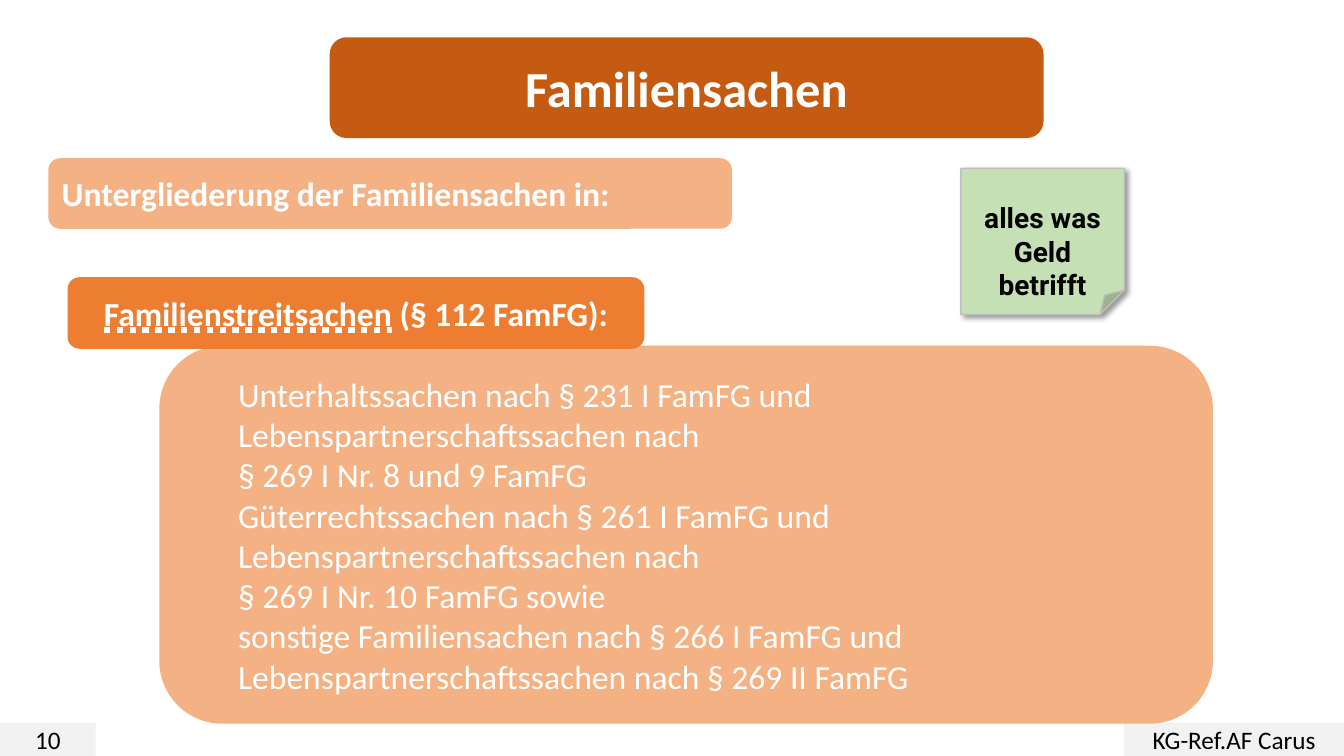
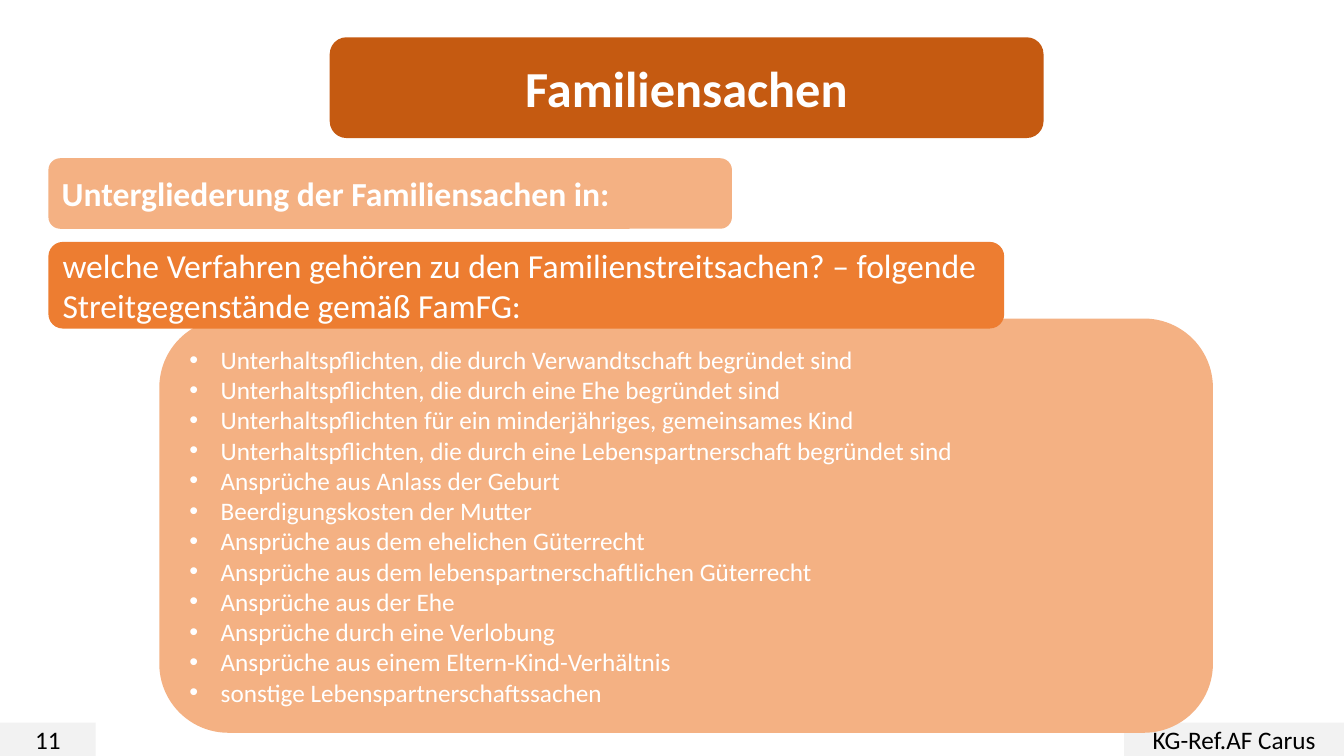
from dataclasses import dataclass

from lxml import etree
from pptx import Presentation
from pptx.dml.color import RGBColor
from pptx.enum.shapes import MSO_SHAPE
from pptx.enum.text import MSO_ANCHOR, MSO_UNDERLINE, PP_ALIGN
from pptx.oxml.ns import qn
from pptx.util import Inches, Pt

ROUNDED = MSO_SHAPE.ROUNDED_RECTANGLE
RECTANGLE = MSO_SHAPE.RECTANGLE
FOLDED = MSO_SHAPE.FOLDED_CORNER
TOP, MIDDLE = MSO_ANCHOR.TOP, MSO_ANCHOR.MIDDLE
LEFT, CENTER = PP_ALIGN.LEFT, PP_ALIGN.CENTER
DOTTED = MSO_UNDERLINE.DOTTED_HEAVY_LINE


@dataclass(frozen=True)
class Theme:
    """Colours, fonts and type sizes shared by all slides."""

    title_fill: str = "C55A11"
    accent: str = "ED7D31"
    panel: str = "F4B183"
    footer: str = "F2F2F2"
    note: str = "C5E0B4"
    note_edge: str = "BFBFBF"
    light: str = "FFFFFF"
    dark: str = "000000"
    font: str = "Calibri"
    note_font: str = "Roboto"
    title_size: int = 36
    heading_size: int = 24
    note_size: int = 20
    small_size: int = 18


THEME = Theme()
FIRST_PAGE = 10
PANEL_LEFT, PANEL_WIDTH = 1.58, 10.45

DISPUTES = [
    "Unterhaltssachen nach § 231 I FamFG und Lebenspartnerschaftssachen nach\n"
    "§ 269 I Nr. 8 und 9 FamFG",
    "Güterrechtssachen nach § 261 I FamFG und Lebenspartnerschaftssachen nach\n"
    "§ 269 I Nr. 10 FamFG sowie",
    "sonstige Familiensachen nach § 266 I FamFG und "
    "Lebenspartnerschaftssachen nach § 269 II FamFG",
]
CLAIMS = [
    "Unterhaltspflichten, die durch Verwandtschaft begründet sind",
    "Unterhaltspflichten, die durch eine Ehe begründet sind",
    "Unterhaltspflichten für ein minderjähriges, gemeinsames Kind",
    "Unterhaltspflichten, die durch eine Lebenspartnerschaft begründet sind",
    "Ansprüche aus Anlass der Geburt",
    "Beerdigungskosten der Mutter",
    "Ansprüche aus dem ehelichen Güterrecht",
    "Ansprüche aus dem lebenspartnerschaftlichen Güterrecht",
    "Ansprüche aus der Ehe",
    "Ansprüche durch eine Verlobung",
    "Ansprüche aus einem Eltern-Kind-Verhältnis",
    "sonstige Lebenspartnerschaftssachen",
]


def rgb(value):
    """Return the colour object for a hex value."""
    return RGBColor.from_string(value)


def add_box(slide, box, fill, lines, size, color=THEME.light, bold=False,
            align=LEFT, preset=ROUNDED, font=THEME.font):
    """Add a filled shape without outline that holds the given paragraphs."""
    shape = slide.shapes.add_shape(preset, *map(Inches, box))
    shape.shadow.inherit = False
    shape.fill.solid()
    shape.fill.fore_color.rgb = rgb(fill)
    shape.line.fill.background()
    frame = shape.text_frame
    frame.word_wrap = True
    frame.vertical_anchor = MIDDLE
    for index, line in enumerate(lines):
        paragraph = frame.add_paragraph() if index else frame.paragraphs[0]
        paragraph.text = line
        paragraph.alignment = align
        paragraph.font.name = font
        paragraph.font.size = Pt(size)
        paragraph.font.bold = bold
        paragraph.font.color.rgb = rgb(color)
    return shape


def indent(shape, left, first=0, bullet=None):
    """Indent every paragraph of a shape and give it an optional bullet."""
    for paragraph in shape.text_frame.paragraphs:
        props = paragraph._p.get_or_add_pPr()
        props.set("marL", str(Inches(left)))
        props.set("indent", str(Inches(first)))
        if bullet:
            mark = etree.Element(qn("a:buChar"), char=bullet)
            typeface = etree.Element(qn("a:buFont"), typeface="Arial")
            defaults = props.find(qn("a:defRPr"))
            defaults.addprevious(typeface)
            defaults.addprevious(mark)


def add_panel(slide, top, height, lines, size):
    """Add the large content panel."""
    return add_box(slide, (PANEL_LEFT, top, PANEL_WIDTH, height),
                   THEME.panel, lines, size)


def add_shadow(shape):
    """Give a shape a soft shadow towards the lower right."""
    effects = shape._element.spPr.find(qn("a:effectLst"))
    shadow = etree.SubElement(
        effects, qn("a:outerShdw"), blurRad=str(Pt(4)), dist=str(Pt(3)),
        dir=str(45 * 60000), algn="tl", rotWithShape="0")
    color = etree.SubElement(shadow, qn("a:srgbClr"), val=THEME.dark)
    etree.SubElement(color, qn("a:alpha"), val="40000")


def add_note(slide, box, lines):
    """Add a sticky note with a folded corner."""
    note = add_box(slide, box, THEME.note, lines, THEME.note_size, THEME.dark,
                   True, CENTER, FOLDED, THEME.note_font)
    note.line.color.rgb = rgb(THEME.note_edge)
    note.line.width = Pt(1)
    note.text_frame.vertical_anchor = TOP
    note.text_frame.margin_top = Inches(0.32)
    add_shadow(note)


def add_page(deck, number):
    """Add a slide with title, subtitle and footers."""
    slide = deck.slides.add_slide(deck.slide_layouts[6])
    add_box(slide, (3.27, 0.37, 7.08, 1), THEME.title_fill, ["Familiensachen"],
            THEME.title_size, bold=True, align=CENTER)
    add_box(slide, (0.48, 1.57, 6.78, 0.7), THEME.panel,
            ["Untergliederung der Familiensachen in:"],
            THEME.heading_size, bold=True)
    for left, width, label in ((0, 0.95, str(number)),
                               (11.15, 2.18, "KG-Ref.AF Carus")):
        add_box(slide, (left, 7.17, width, 0.33), THEME.footer, [label],
                THEME.small_size, THEME.dark, align=CENTER, preset=RECTANGLE)
    return slide


def build_disputes(deck, number):
    """Build the slide on the kinds of family disputes."""
    slide = add_page(deck, number)
    add_note(slide, (9.53, 1.67, 1.62, 1.45), ["alles was Geld", "betrifft"])
    indent(add_panel(slide, 3.43, 3.75, DISPUTES, THEME.heading_size), 0.5)
    heading = add_box(slide, (0.67, 2.75, 5.72, 0.71), THEME.accent,
                      ["Familienstreitsachen"], THEME.heading_size,
                      bold=True, align=CENTER)
    term = heading.text_frame.paragraphs[0]
    term.runs[0].font.underline = DOTTED
    term.add_run().text = " (§ 112 FamFG):"


def build_claims(deck, number):
    """Build the slide that lists the matters in dispute."""
    slide = add_page(deck, number)
    claims = add_panel(slide, 3.16, 4.11, CLAIMS, THEME.small_size)
    indent(claims, 0.31, -0.31, "•")
    add_box(slide, (0.48, 2.4, 9.48, 0.86), THEME.accent,
            ["welche Verfahren gehören zu den Familienstreitsachen? – folgende "
             "Streitgegenstände gemäß FamFG:"], THEME.heading_size)


def main():
    """Build and save the presentation."""
    deck = Presentation()
    deck.slide_width, deck.slide_height = Inches(13.33), Inches(7.5)
    for number, build in enumerate((build_disputes, build_claims), FIRST_PAGE):
        build(deck, number)
    deck.save("out.pptx")


if __name__ == "__main__":
    main()
